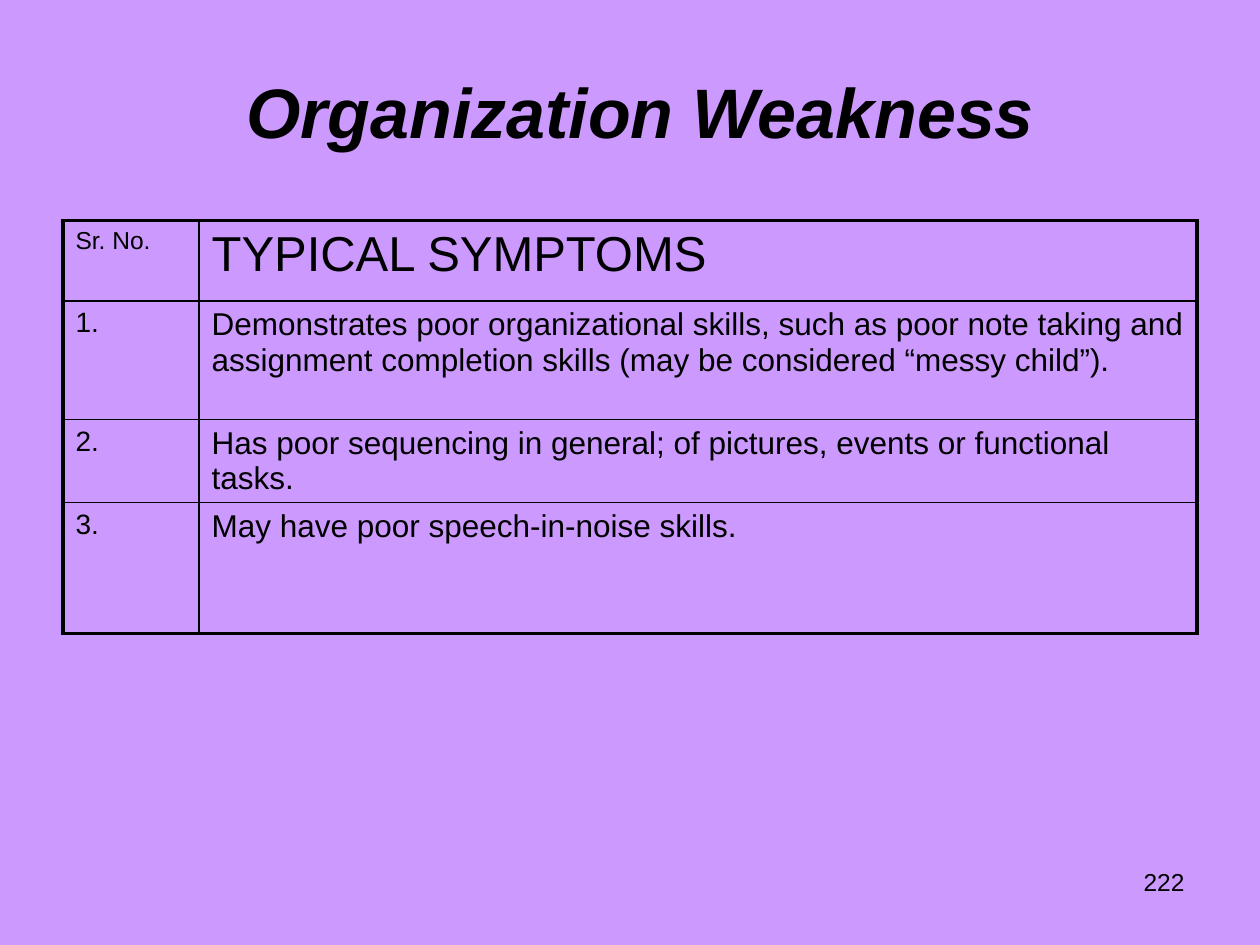
from pptx import Presentation
from pptx.dml.color import RGBColor
from pptx.enum.text import MSO_ANCHOR, PP_ALIGN
from pptx.oxml.ns import qn
from pptx.util import Inches, Pt
from lxml.etree import SubElement

COLORS = {"background": "CC99FF", "ink": "000000"}
FONT = "Arial"
COLUMN_WIDTHS = [1.08, 7.92]
ROW_HEIGHTS = [0.64, 0.94, 0.66, 1.04]
THIN, THICK = 1, 2.25
SYMPTOMS = [
    "Demonstrates poor organizational skills, such as poor note taking and "
    "assignment completion skills (may be considered “messy child”).",
    "Has poor sequencing in general; of pictures, events or functional tasks.",
    "May have poor speech-in-noise skills.",
]


def rgb(name):
    return RGBColor.from_string(COLORS[name])


def write(tf, text, size, align=PP_ALIGN.LEFT, bold=False, italic=False):
    tf.word_wrap = True
    p = tf.paragraphs[0]
    p.text = text
    p.alignment = align
    font = p.font
    font.name, font.size = FONT, Pt(size)
    font.bold, font.italic = bold, italic
    font.color.rgb = rgb("ink")


def set_borders(cell, widths):
    """Draw the cell's edges; the lines must precede the fill in tcPr."""
    tc_pr = cell._tc.get_or_add_tcPr()
    for i, (side, width) in enumerate(widths.items()):
        ln = SubElement(tc_pr, qn(f"a:ln{side}"), w=str(Pt(width)))
        fill = SubElement(ln, qn("a:solidFill"))
        SubElement(fill, qn("a:srgbClr"), val=COLORS["ink"])
        tc_pr.insert(i, ln)


def add_title(s, text):
    title = s.shapes.title
    title.left, title.top = Inches(0.58), Inches(0.44)
    title.width, title.height = Inches(9), Inches(0.87)
    title.text_frame.vertical_anchor = MSO_ANCHOR.MIDDLE
    write(title.text_frame, text, 40, PP_ALIGN.CENTER, bold=True, italic=True)


def add_symptom_table(s):
    rows = [("Sr. No.", "TYPICAL SYMPTOMS")]
    rows += [(f"{n}.", text) for n, text in enumerate(SYMPTOMS, 1)]
    last_row, last_col = len(rows) - 1, len(COLUMN_WIDTHS) - 1
    table = s.shapes.add_table(
        len(rows), len(COLUMN_WIDTHS), Inches(0.5), Inches(1.75),
        Inches(sum(COLUMN_WIDTHS)), Inches(sum(ROW_HEIGHTS))).table
    table.first_row = table.horz_banding = False
    for column, width in zip(table.columns, COLUMN_WIDTHS):
        column.width = Inches(width)
    for row, height in zip(table.rows, ROW_HEIGHTS):
        row.height = Inches(height)

    for r, texts in enumerate(rows):
        sizes = (14, 28) if r == 0 else (16, 18)
        for c, (text, size) in enumerate(zip(texts, sizes)):
            cell = table.cell(r, c)
            cell.fill.background()
            write(cell.text_frame, text, size)
            # Thick frame outside, thin rules inside
            outer = {"L": c == 0, "R": c == last_col,
                     "T": r == 0, "B": r == last_row}
            set_borders(cell, {side: THICK if edge else THIN
                               for side, edge in outer.items()})


def add_page_number(s, number):
    box = s.shapes.add_textbox(Inches(7.17), Inches(6.83),
                               Inches(2.33), Inches(0.52))
    write(box.text_frame, number, 14, PP_ALIGN.RIGHT)


def main():
    prs = Presentation()
    prs.slide_width, prs.slide_height = Inches(10), Inches(7.5)
    s = prs.slides.add_slide(prs.slide_layouts[5])  # title only
    s.background.fill.solid()
    s.background.fill.fore_color.rgb = rgb("background")

    add_title(s, "Organization Weakness")
    add_symptom_table(s)
    add_page_number(s, "222")
    prs.save("out.pptx")


if __name__ == "__main__":
    main()
